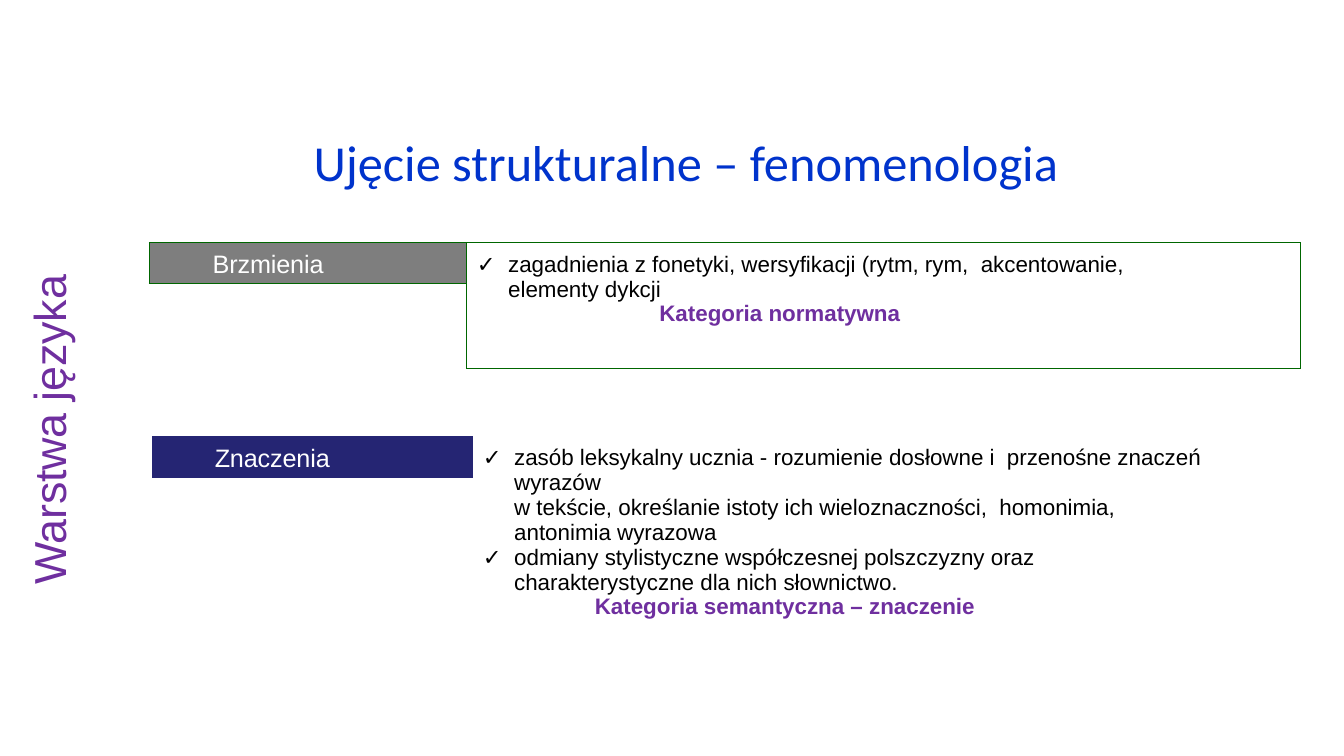
from pptx import Presentation
from pptx.dml.color import RGBColor
from pptx.enum.text import MSO_ANCHOR, PP_ALIGN
from pptx.oxml.ns import qn
from pptx.util import Inches, Pt
from lxml.etree import SubElement

BLUE = RGBColor(0x00, 0x33, 0xCC)
PURPLE = RGBColor(0x6F, 0x2F, 0x9F)
GREY = RGBColor(0x7E, 0x7E, 0x7E)
NAVY = RGBColor(0x25, 0x25, 0x73)
GREEN = RGBColor(0x00, 0x66, 0x00)
WHITE = RGBColor(0xFF, 0xFF, 0xFF)
BLACK = RGBColor(0x00, 0x00, 0x00)
NO_STYLE = "{2D5ABB26-0587-4C30-8999-92F81FD0307C}"
TEXT_INDENT = 0.41
CHECK_HANG = -0.31

SOUNDS = [
    ("check", "zagadnienia z fonetyki, wersyfikacji (rytm, rym,  akcentowanie, elementy dykcji", TEXT_INDENT),
    ("category", "Kategoria normatywna", 1.91),
]
MEANINGS = [
    ("check", "zasób leksykalny ucznia - rozumienie dosłowne i  przenośne znaczeń wyrazów", TEXT_INDENT),
    ("plain", "w tekście, określanie istoty ich wieloznaczności,  homonimia, antonimia wyrazowa", TEXT_INDENT),
    ("check", "odmiany stylistyczne współczesnej polszczyzny oraz", TEXT_INDENT),
    ("plain", "charakterystyczne dla nich słownictwo.", TEXT_INDENT),
    ("category", "Kategoria semantyczna – znaczenie", 1.21),
]


def write(paragraph, text, size, color, font="Arial", left=0, hang=0, bold=False, spacing=0):
    run = paragraph.add_run()
    run.text = text
    if spacing:
        run.font._element.set("spc", str(spacing))
    paragraph.alignment = PP_ALIGN.LEFT
    properties = paragraph._p.get_or_add_pPr()
    properties.set("marL", str(Inches(left)))
    properties.set("indent", str(Inches(hang)))
    if hang:
        SubElement(properties, qn("a:buFont"), typeface="Arial")
        SubElement(properties, qn("a:buChar"), char="✓")
    else:
        SubElement(properties, qn("a:buNone"))
    paragraph.font.name = font
    paragraph.font.size = Pt(size)
    paragraph.font.bold = bold
    paragraph.font.color.rgb = color


def set_insets(area, top=0.0, right=0.0, bottom=0.0):
    area.margin_left = 0
    area.margin_top = Inches(top)
    area.margin_right = Inches(right)
    area.margin_bottom = Inches(bottom)


def add_border(cell, sides):
    properties = cell._tc.get_or_add_tcPr()
    for position, side in enumerate(s for s in "LRTB" if s in sides):
        line = properties.makeelement(qn(f"a:ln{side}"), {"w": str(Pt(0.75))})
        fill = SubElement(line, qn("a:solidFill"))
        SubElement(fill, qn("a:srgbClr"), val=str(GREEN))
        properties.insert(position, line)


def add_layer(slide, left, top, columns, rows, name, name_indent, name_fill, points, bordered=False):
    frame = slide.shapes.add_table(2, 2, Inches(left), Inches(top),
                                   Inches(sum(columns)), Inches(sum(rows)))
    table = frame.table
    table._tbl.tblPr.find(qn("a:tableStyleId")).text = NO_STYLE
    table.first_row = table.horz_banding = False
    for column, width in zip(table.columns, columns):
        column.width = Inches(width)
    for row, height in zip(table.rows, rows):
        row.height = Inches(height)
    for cell in table.iter_cells():
        cell.fill.background()

    heading, details = table.cell(0, 0), table.cell(0, 1)
    details.merge(table.cell(1, 1))
    heading.fill.solid()
    heading.fill.fore_color.rgb = name_fill
    set_insets(heading, top=0.08)
    write(heading.text_frame.paragraphs[0], name, 18, WHITE, left=name_indent, spacing=-10)

    set_insets(details, top=0.09, right=1.02)
    for index, (role, text, indent) in enumerate(points):
        body = details.text_frame
        paragraph = body.add_paragraph() if index else body.paragraphs[0]
        category = role == "category"
        write(paragraph, text, 16, PURPLE if category else BLACK, left=indent,
              hang=CHECK_HANG if role == "check" else 0, bold=category)

    if bordered:
        add_border(heading, "LRTB")
        add_border(details, "LRTB")
        add_border(table.cell(1, 0), "RT")
        add_border(table.cell(1, 1), "LRB")


def add_title(slide, text):
    title = slide.shapes.title
    title.left, title.top = Inches(0.58), Inches(1.28)
    title.width, title.height = Inches(12.76), Inches(0.63)
    frame = title.text_frame
    set_insets(frame, top=0.01)
    frame.vertical_anchor = MSO_ANCHOR.MIDDLE
    write(frame.paragraphs[0], text, 36, BLUE, font="Calibri", left=2.53)


def add_side_label(slide, text):
    label = slide.shapes.add_textbox(Inches(0.24), Inches(2.69), Inches(0.5), Inches(3.12))
    frame = label.text_frame
    frame.word_wrap = True
    set_insets(frame)
    frame._txBody.bodyPr.set("vert", "vert270")
    write(frame.paragraphs[0], text, 32, PURPLE, left=0.01, spacing=-15)
    frame.paragraphs[0].line_spacing = Pt(36.4)


def main():
    deck = Presentation()
    deck.slide_width, deck.slide_height = Inches(13.33), Inches(7.5)
    slide = deck.slides.add_slide(deck.slide_layouts[5])
    add_title(slide, "Ujęcie strukturalne – fenomenologia")
    add_layer(slide, 1.48, 2.41, (3.15, 8.27), (0.4, 0.85), "Brzmienia", 0.63, GREY,
              SOUNDS, bordered=True)
    add_layer(slide, 1.51, 4.33, (3.18, 8.27), (0.41, 1.58), "Znaczenia", 0.62, NAVY, MEANINGS)
    add_side_label(slide, "Warstwa języka")
    deck.save("out.pptx")


if __name__ == "__main__":
    main()
